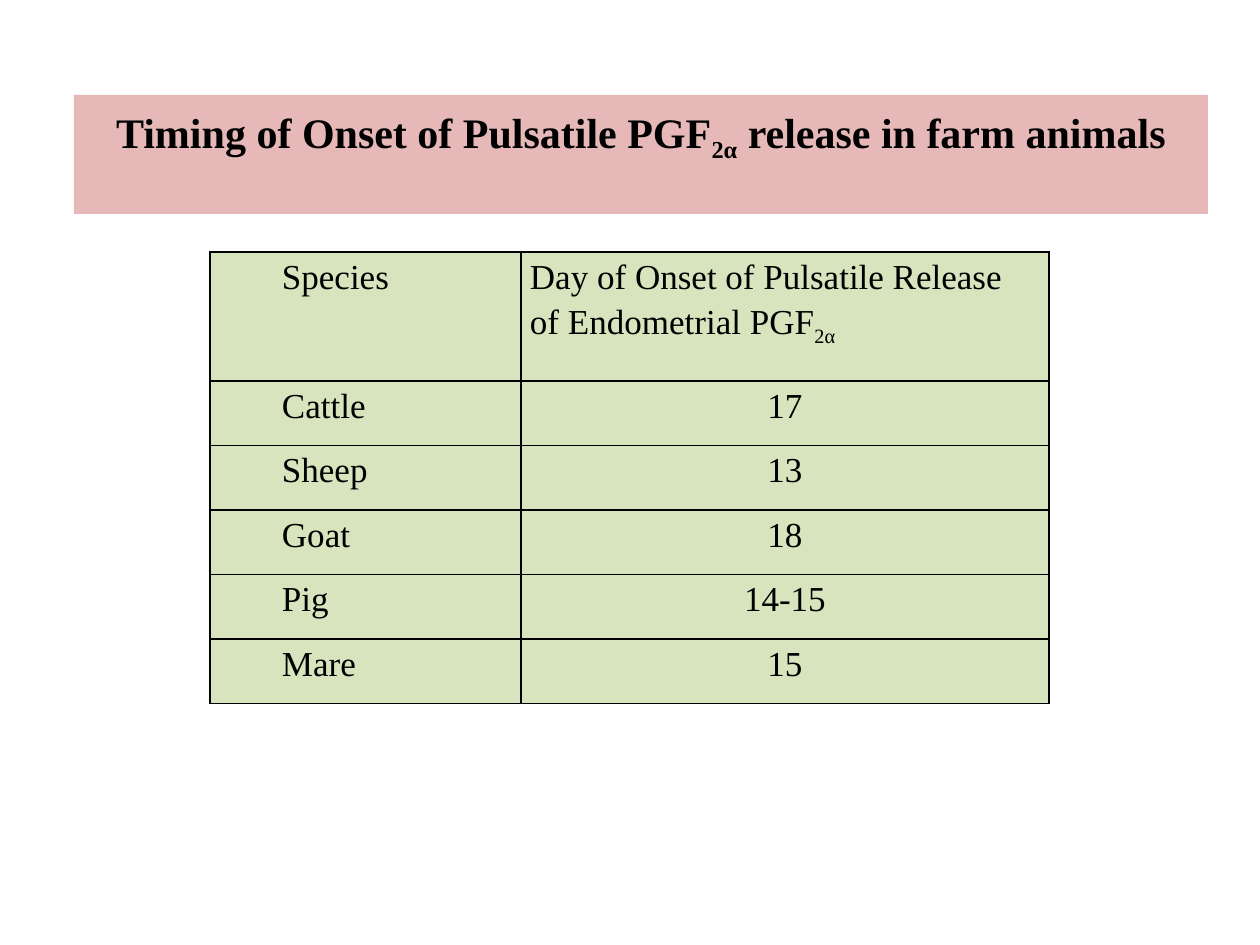
from lxml import etree
from pptx import Presentation
from pptx.dml.color import RGBColor
from pptx.enum.shapes import MSO_SHAPE
from pptx.enum.text import MSO_ANCHOR, PP_ALIGN
from pptx.oxml.ns import qn
from pptx.util import Emu, Pt

PX = 914400 // 126
FONT = "Times New Roman"
BLACK = RGBColor(0x00, 0x00, 0x00)
PINK = RGBColor(0xE6, 0xB9, 0xB8)
GREEN = RGBColor(0xD7, 0xE4, 0xBD)

# Each text is a list of (words, is subscript) runs.
TITLE = [("Timing of Onset of Pulsatile PGF", False), ("2α", True),
         (" release in farm animals", False)]
HEADS = [[("Species", False)],
         [("Day of Onset of Pulsatile Release of Endometrial PGF", False),
          ("2α", True)]]
DAYS = [("Cattle", "17"), ("Sheep", "13"), ("Goat", "18"),
        ("Pig", "14-15"), ("Mare", "15")]

BANNER = (74, 95, 1134, 119)
LEFT, TOP = 210, 252
COLS = (311, 528)
HEAD = 129
INDENT, INSET = 63, 9


def px(n):
    return Emu(round(n * PX))


def write(para, parts, size, bold=False):
    for words, sub in parts:
        run = para.add_run()
        run.text = words
        font = run.font
        font.name, font.size, font.bold = FONT, Pt(size), bold
        font.color.rgb = BLACK
        if sub:
            font._element.set("baseline", "-25000")


def border(cell):
    """Draw a 1 pt line on all four sides; call before setting the fill."""
    props = cell._tc.get_or_add_tcPr()
    for side in ("a:lnL", "a:lnR", "a:lnT", "a:lnB"):
        line = etree.SubElement(props, qn(side), w=str(Pt(1)))
        fill = etree.SubElement(line, qn("a:solidFill"))
        etree.SubElement(fill, qn("a:srgbClr"), val=str(BLACK))


def add_banner(slide):
    box = slide.shapes.add_shape(MSO_SHAPE.RECTANGLE, *map(px, BANNER))
    box.shadow.inherit = False
    box.fill.solid()
    box.fill.fore_color.rgb = PINK
    box.line.fill.background()
    frame = box.text_frame
    frame.word_wrap = True
    frame.vertical_anchor = MSO_ANCHOR.TOP
    frame.margin_top = px(11)
    para = frame.paragraphs[0]
    para.alignment = PP_ALIGN.CENTER
    write(para, TITLE, 24, bold=True)


def add_days(slide):
    rows = [HEADS] + [[[(text, False)] for text in row] for row in DAYS]
    heights = [HEAD] + [HEAD / 2] * len(DAYS)
    table = slide.shapes.add_table(
        len(rows), len(COLS), px(LEFT), px(TOP),
        px(sum(COLS)), px(sum(heights))).table
    table.first_row = table.horz_banding = False
    for col, width in zip(table.columns, COLS):
        col.width = px(width)
    for r, row in enumerate(rows):
        table.rows[r].height = px(heights[r])
        for c, parts in enumerate(row):
            cell = table.cell(r, c)
            border(cell)
            cell.fill.solid()
            cell.fill.fore_color.rgb = GREEN
            cell.margin_left = cell.margin_right = px(INSET)
            cell.margin_top = cell.margin_bottom = 0
            para = cell.text_frame.paragraphs[0]
            para.line_spacing, para.space_after = 1.15, Pt(10)
            if c == 0:
                para.level = 1
                props = para._p.get_or_add_pPr()
                props.set("marL", str(px(INDENT)))
                props.set("indent", "0")
            elif r > 0:
                para.alignment = PP_ALIGN.CENTER
            write(para, parts, 20)


def main():
    deck = Presentation()
    deck.slide_width, deck.slide_height = px(1260), px(945)
    slide = deck.slides.add_slide(deck.slide_layouts[6])
    add_banner(slide)
    add_days(slide)
    deck.save("out.pptx")


if __name__ == "__main__":
    main()
